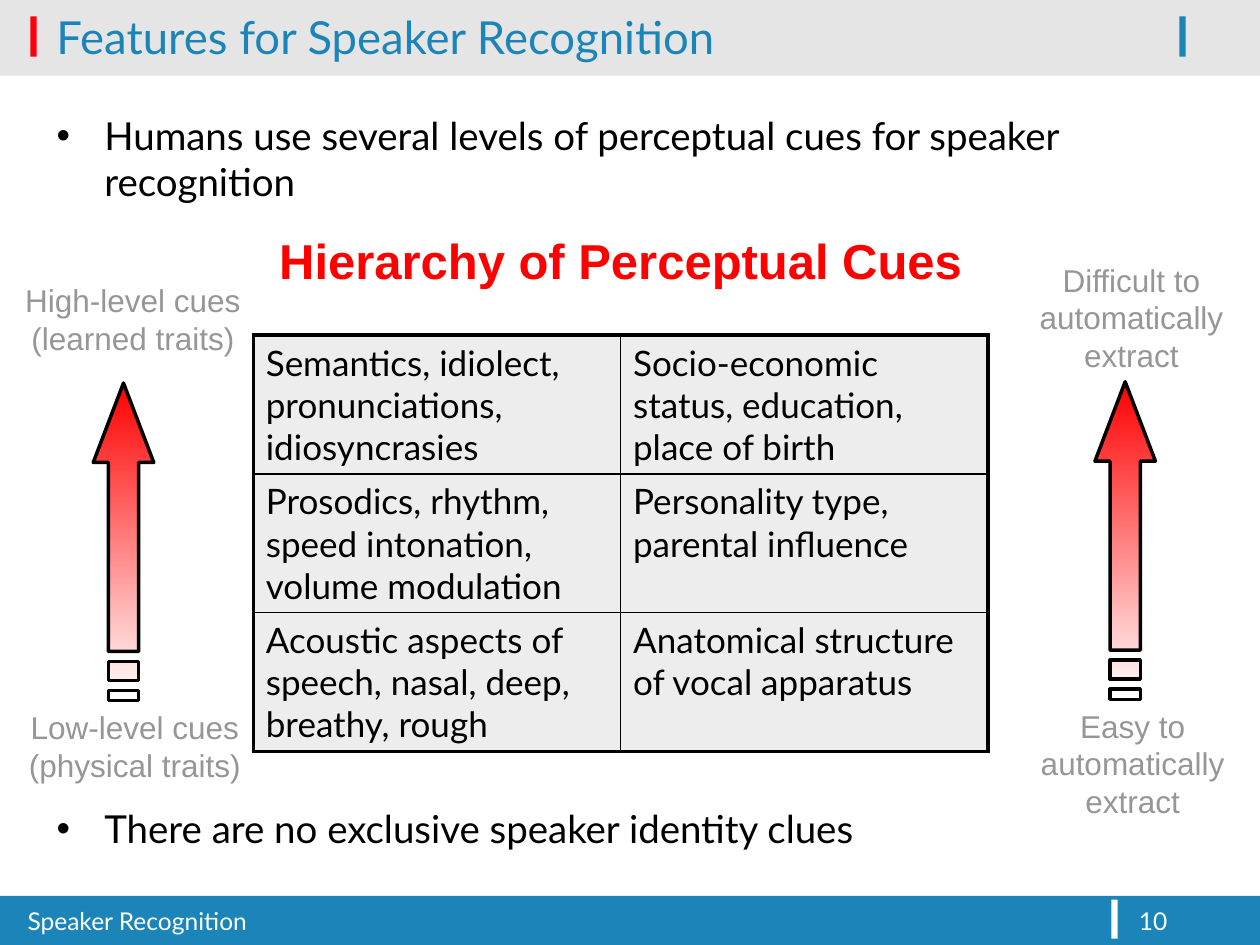
from lxml.etree import SubElement
from pptx import Presentation
from pptx.dml.color import RGBColor
from pptx.enum.shapes import MSO_SHAPE
from pptx.enum.text import MSO_ANCHOR, PP_ALIGN
from pptx.oxml.ns import qn
from pptx.util import Inches, Pt

BLACK, WHITE, RED, BLUE, GRAY = "000000", "FFFFFF", "FF0000", "1B85B9", "969696"

BARS = [
    (0, 0.56, 10, 0.04, BLACK, 10),
    (0, 7.11, 10, 0.39, BLUE, 100),
    (0, 0, 10, 0.56, BLACK, 10),
    (0.24, 0.13, 0.05, 0.32, "FE000C", 100),
    (9.36, 0.13, 0.05, 0.32, BLUE, 100),
    (8.82, 7.14, 0.05, 0.31, WHITE, 100),
]
TITLE = "Features for Speaker Recognition"
FOOTER = "Speaker Recognition"
PAGE = "10"
BULLETS = [
    (0.84, 0.85, "Humans use several levels of perceptual cues for speaker recognition"),
    (6.34, 0.48, "There are no exclusive speaker identity clues"),
]
HEADING = "Hierarchy of Perceptual Cues"
CUES = [
    ("Semantics, idiolect, pronunciations, idiosyncrasies",
     "Socio-economic status, education, place of birth"),
    ("Prosodics, rhythm, speed intonation, volume modulation",
     "Personality type, parental influence"),
    ("Acoustic aspects of speech, nasal, deep, breathy, rough",
     "Anatomical structure of vocal apparatus"),
]
LABELS = [
    (0.1, 2.18, 1.91, 0.7, "High-level cues\n(learned traits)"),
    (0.13, 5.57, 1.88, 0.7, "Low-level cues\n(physical traits)"),
    (8.15, 2.02, 1.66, 1, "Difficult to\nautomatically\nextract"),
    (8.16, 5.56, 1.66, 1, "Easy to\nautomatically\nextract"),
]
ARROWS = [(0.98, 3.04), (8.93, 3.03)]
SHAFT, HEAD = 0.12, 0.24
ARROW_HEAD = [(-HEAD, 0.63), (-SHAFT, 0.63), (-SHAFT, 2.13), (SHAFT, 2.13),
              (SHAFT, 0.63), (HEAD, 0.63), (0, 0)]
STRIPES = [(2.21, 2.36), (2.44, 2.52)]


def rgb(color):
    """Turn a hex string into a colour."""
    return RGBColor.from_string(color)


def paint(fill, element, color, alpha=100):
    """Fill an object with a colour of the given opacity."""
    fill.solid()
    fill.fore_color.rgb = rgb(color)
    if alpha < 100:
        clr = next(element.iter(qn("a:srgbClr")))
        SubElement(clr, qn("a:alpha")).set("val", str(alpha * 1000))


def style(tf, size, color, font="Lato", bold=False, align=PP_ALIGN.LEFT):
    """Format every paragraph of a text frame."""
    for p in tf.paragraphs:
        p.alignment = align
        for r in p.runs:
            r.font.size, r.font.name, r.font.bold = Pt(size), font, bold
            r.font.color.rgb = rgb(color)


def add_text(s, box, text, size, color, wrap=True, **look):
    """Add a formatted text box and return its text frame."""
    tf = s.shapes.add_textbox(*map(Inches, box)).text_frame
    tf.word_wrap = wrap
    tf.text = text
    style(tf, size, color, **look)
    return tf


def add_bullet(p, indent):
    """Give a paragraph a hanging round bullet."""
    pPr = p._p.get_or_add_pPr()
    pPr.set("marL", str(Inches(indent)))
    pPr.set("indent", str(-Inches(indent)))
    SubElement(pPr, qn("a:buFont")).set("typeface", "Arial")
    SubElement(pPr, qn("a:buChar")).set("char", "•")


def add_borders(cell, widths):
    """Draw the left, right, top and bottom borders of a cell."""
    tcPr = cell._tc.get_or_add_tcPr()
    for i, (side, width) in enumerate(zip("LRTB", widths)):
        ln = SubElement(tcPr, qn(f"a:ln{side}"), w=str(Pt(width)))
        SubElement(SubElement(ln, qn("a:solidFill")), qn("a:srgbClr"), val=BLACK)
        tcPr.insert(i, ln)


def add_cues(s):
    """Add the table of perceptual cues."""
    rows, cols = len(CUES), len(CUES[0])
    box = map(Inches, (2.01, 2.66, 5.83, 3.3))
    table = s.shapes.add_table(rows, cols, *box).table
    table.first_row = table.horz_banding = False
    for i, row in enumerate(CUES):
        for j, text in enumerate(row):
            cell = table.cell(i, j)
            cell.text_frame.text = text
            style(cell.text_frame, 20, BLACK)
            paint(cell.fill, cell._tc.get_or_add_tcPr(), "DDDDDD", 50)
            outer = (j == 0, j == cols - 1, i == 0, i == rows - 1)
            add_borders(cell, [2.25 if edge else 1 for edge in outer])


def add_arrow(s, x, y):
    """Add a striped upward arrow with its tip at the given point."""
    outlines = [ARROW_HEAD] + [
        [(-SHAFT, b), (SHAFT, b), (SHAFT, t), (-SHAFT, t)] for t, b in STRIPES]
    outlines = [[(Inches(x + dx), Inches(y + dy)) for dx, dy in o] for o in outlines]
    builder = s.shapes.build_freeform(*outlines[0][0])
    for k, points in enumerate(outlines):
        if k:
            builder.move_to(*points[0])
        builder.add_line_segments(points[1:], close=True)
    sp = builder.convert_to_shape()
    sp.shadow.inherit = False
    sp.fill.gradient()
    sp.fill.gradient_angle = 90
    for stop, color in zip(sp.fill.gradient_stops, (WHITE, RED)):
        stop.color.rgb = rgb(color)
    sp.line.color.rgb = rgb(BLACK)
    sp.line.width = Pt(2)


def main():
    """Build the slide and save it."""
    prs = Presentation()
    prs.slide_width, prs.slide_height = Inches(10), Inches(7.5)
    s = prs.slides.add_slide(prs.slide_layouts[6])
    for *box, color, alpha in BARS:
        sp = s.shapes.add_shape(MSO_SHAPE.RECTANGLE, *map(Inches, box))
        sp.shadow.inherit = False
        paint(sp.fill, sp._element.spPr, color, alpha)
        sp.line.fill.background()
    add_text(s, (0.12, 7.14, 8.58, 0.36), FOOTER, 14, WHITE)
    add_text(s, (8.94, 7.14, 0.9, 0.36), PAGE, 14, WHITE)
    tf = add_text(s, (0.35, -0.11, 8.9, 0.79), TITLE, 26, BLUE)
    tf.vertical_anchor = MSO_ANCHOR.MIDDLE
    for top, height, text in BULLETS:
        tf = add_text(s, (0.35, top, 9.29, height), text, 22, BLACK)
        add_bullet(tf.paragraphs[0], 0.38)
    add_cues(s)
    add_text(s, (2.09, 1.78, 5.67, 0.57), HEADING, 28, RED,
             font="Arial", bold=True, align=PP_ALIGN.CENTER)
    for *box, text in LABELS:
        add_text(s, box, text, 18, GRAY, wrap=False,
                 font="Arial", align=PP_ALIGN.CENTER)
    for x, y in ARROWS:
        add_arrow(s, x, y)
    prs.save("out.pptx")


if __name__ == "__main__":
    main()
